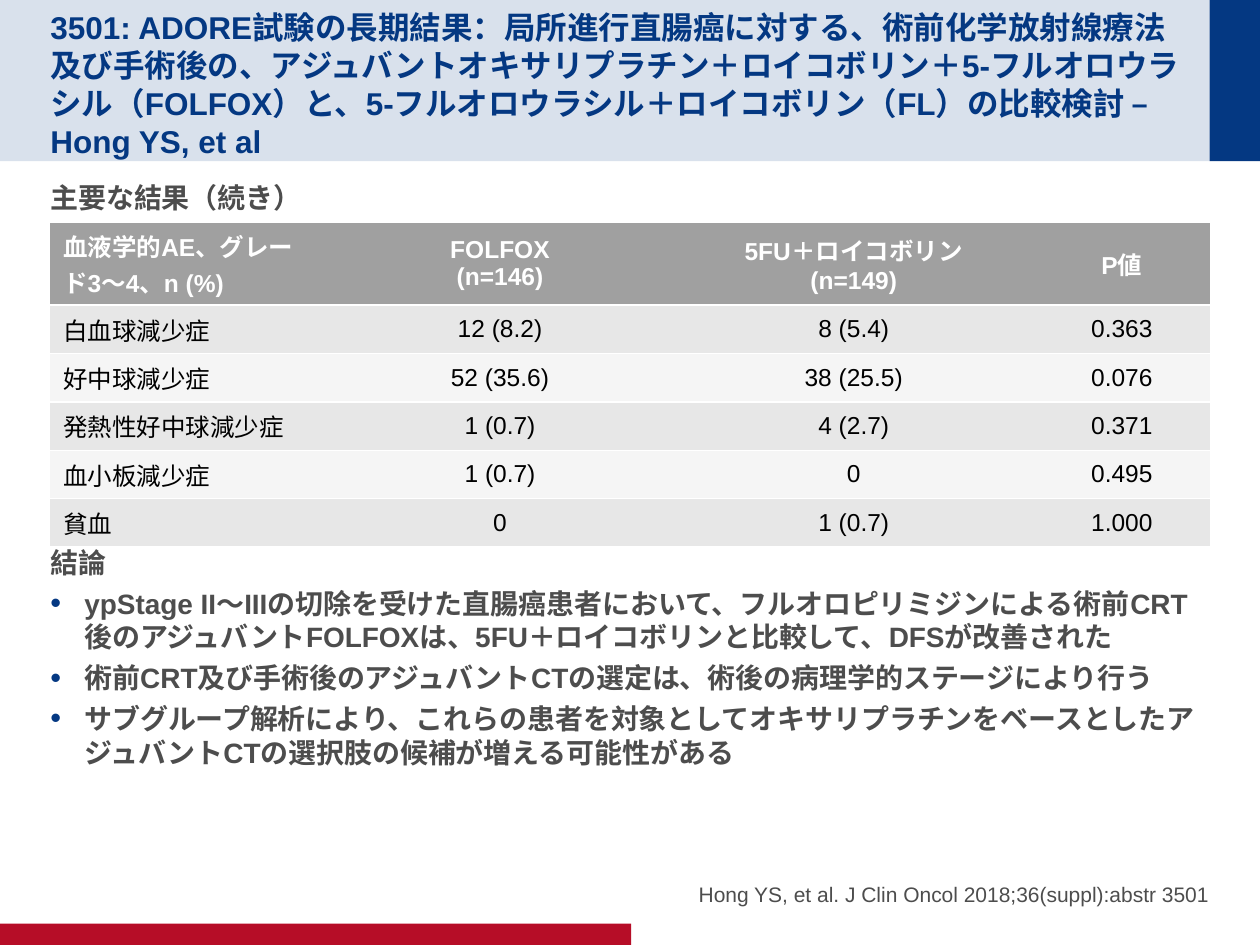
"""Build the slide on haematological adverse events and conclusions of the ADORE trial."""
import pptx
import pptx.dml.color
import pptx.enum.shapes
import pptx.enum.text
import pptx.oxml
import pptx.util
from lxml import etree

Pt = pptx.util.Pt
ALIGN = pptx.enum.text.PP_ALIGN
ANCHOR = pptx.enum.text.MSO_ANCHOR
NAVY, RED, GREY, WHITE = "043882", "B60D27", "4D4D4D", "FFFFFF"
NAMESPACE = 'xmlns:a="http://schemas.openxmlformats.org/drawingml/2006/main"'


def color(value):
    return pptx.dml.color.RGBColor.from_string(value)


def write(frame, text, size=16, ink=GREY, bold=True, align=ALIGN.LEFT,
          anchor=ANCHOR.TOP, after=0, leading=None, bullet=False, more=False):
    frame.word_wrap = True
    frame.vertical_anchor = anchor
    para = frame.add_paragraph() if more else frame.paragraphs[0]
    para.text = text
    para.alignment = align
    para.space_after = Pt(after)
    if leading:
        para.line_spacing = Pt(leading)
    for span in para.runs:
        span.font.name = "Arial"
        span.font.size = Pt(size)
        span.font.bold = bold
        span.font.color.rgb = color(ink)
    if bullet:
        properties = para._p.get_or_add_pPr()
        properties.set("marL", str(Pt(19.44)))
        properties.set("indent", str(-Pt(19.44)))
        for part in (f'<a:buClr {NAMESPACE}><a:srgbClr val="{NAVY}"/></a:buClr>',
                     f'<a:buSzPct {NAMESPACE} val="110000"/>',
                     f'<a:buFont {NAMESPACE} typeface="Arial"/>',
                     f'<a:buChar {NAMESPACE} char="•"/>'):
            properties.append(pptx.oxml.parse_xml(part))


deck = pptx.Presentation()
deck.slide_width, deck.slide_height = Pt(720), Pt(540)
page = deck.slides.add_slide(deck.slide_layouts[6])

bands = [(0, 0, 691.2, 92.16, "D9E1EC"), (691.2, 0, 28.8, 92.16, NAVY),
         (0, 527.76, 360.72, 12.24, RED)]
for left, top, width, height, fill in bands:
    band = page.shapes.add_shape(pptx.enum.shapes.MSO_SHAPE.RECTANGLE,
                                 Pt(left), Pt(top), Pt(width), Pt(height))
    band.shadow.inherit = False
    band.fill.solid()
    band.fill.fore_color.rgb = color(fill)
    band.line.fill.background()

title = ("3501: ADORE試験の長期結果：局所進行直腸癌に対する、術前化学放射線療法及び手術後の、"
         "アジュバントオキサリプラチン＋ロイコボリン＋5-フルオロウラシル（FOLFOX）と、"
         "5-フルオロウラシル＋ロイコボリン（FL）の比較検討 – Hong YS, et al")
conclusions = [
    "ypStage II～IIIの切除を受けた直腸癌患者において、フルオロピリミジンによる術前CRT後の"
    "アジュバントFOLFOXは、5FU＋ロイコボリンと比較して、DFSが改善された",
    "術前CRT及び手術後のアジュバントCTの選定は、術後の病理学的ステージにより行う",
    "サブグループ解析により、これらの患者を対象としてオキサリプラチンをベースとした"
    "アジュバントCTの選択肢の候補が増える可能性がある",
]
citation = "Hong YS, et al. J Clin Oncol 2018;36(suppl):abstr 3501"
body = dict(after=4, leading=19.3)

texts = [
    (28.8, 14.4, 648.72, 63.36, 3.6, title,
     dict(size=18, ink=NAVY, anchor=ANCHOR.MIDDLE, leading=21.7)),
    (28.8, 99.5, 662.4, 27, 3.6, "主要な結果（続き）", body),
    (28.8, 308, 662.4, 164, 3.6, "結論", body),
    (347.76, 480.24, 343.44, 38.16, 0, citation,
     dict(size=12, bold=False, align=ALIGN.RIGHT, anchor=ANCHOR.BOTTOM)),
]
for left, top, width, height, inset, text, style in texts:
    box = page.shapes.add_textbox(Pt(left), Pt(top), Pt(width), Pt(height))
    frame = box.text_frame
    frame.margin_left = frame.margin_right = frame.margin_bottom = 0
    frame.margin_top = Pt(inset)
    write(frame, text, **style)
    if text == "結論":
        for conclusion in conclusions:
            write(frame, conclusion, bullet=True, more=True, **body)

rows = [
    ("血液学的AE、グレード3～4、n (%)", "FOLFOX\n(n=146)", "5FU＋ロイコボリン\n(n=149)", "P値"),
    ("白血球減少症", "12 (8.2)", "8 (5.4)", "0.363"),
    ("好中球減少症", "52 (35.6)", "38 (25.5)", "0.076"),
    ("発熱性好中球減少症", "1 (0.7)", "4 (2.7)", "0.371"),
    ("血小板減少症", "1 (0.7)", "0", "0.495"),
    ("貧血", "0", "1 (0.7)", "1.000"),
]
widths = [157.9, 198.1, 206.2, 100.2]
heights = [47.6] + [27.65] * 5
holder = page.shapes.add_table(len(rows), len(widths), Pt(28.8), Pt(126.8),
                               Pt(sum(widths)), Pt(sum(heights)))
table = holder.table
table.first_row = table.horz_banding = False
style_id = table._tbl.tblPr.find(pptx.oxml.ns.qn("a:tableStyleId"))
style_id.text = "{2D5ABB26-0587-4C30-8999-92F81FD0307C}"
for column, width in zip(table.columns, widths):
    column.width = Pt(width)
for index, values in enumerate(rows):
    table.rows[index].height = Pt(heights[index])
    header = index == 0
    fill = "A0A0A0" if header else ("F5F5F5", "E7E7E7")[index % 2]
    for place, value in enumerate(values):
        cell = table.cell(index, place)
        properties = cell._tc.get_or_add_tcPr()
        for side in ("lnT", "lnB"):
            line = etree.fromstring(
                f'<a:{side} {NAMESPACE} w="12700"><a:solidFill>'
                f'<a:srgbClr val="{WHITE}"/></a:solidFill></a:{side}>')
            properties.append(line)
        cell.fill.solid()
        cell.fill.fore_color.rgb = color(fill)
        write(cell.text_frame, value, size=14, ink=WHITE if header else "000000",
              bold=header, align=ALIGN.CENTER if place else ALIGN.LEFT)
        cell.vertical_anchor = ANCHOR.MIDDLE

deck.save("out.pptx")
